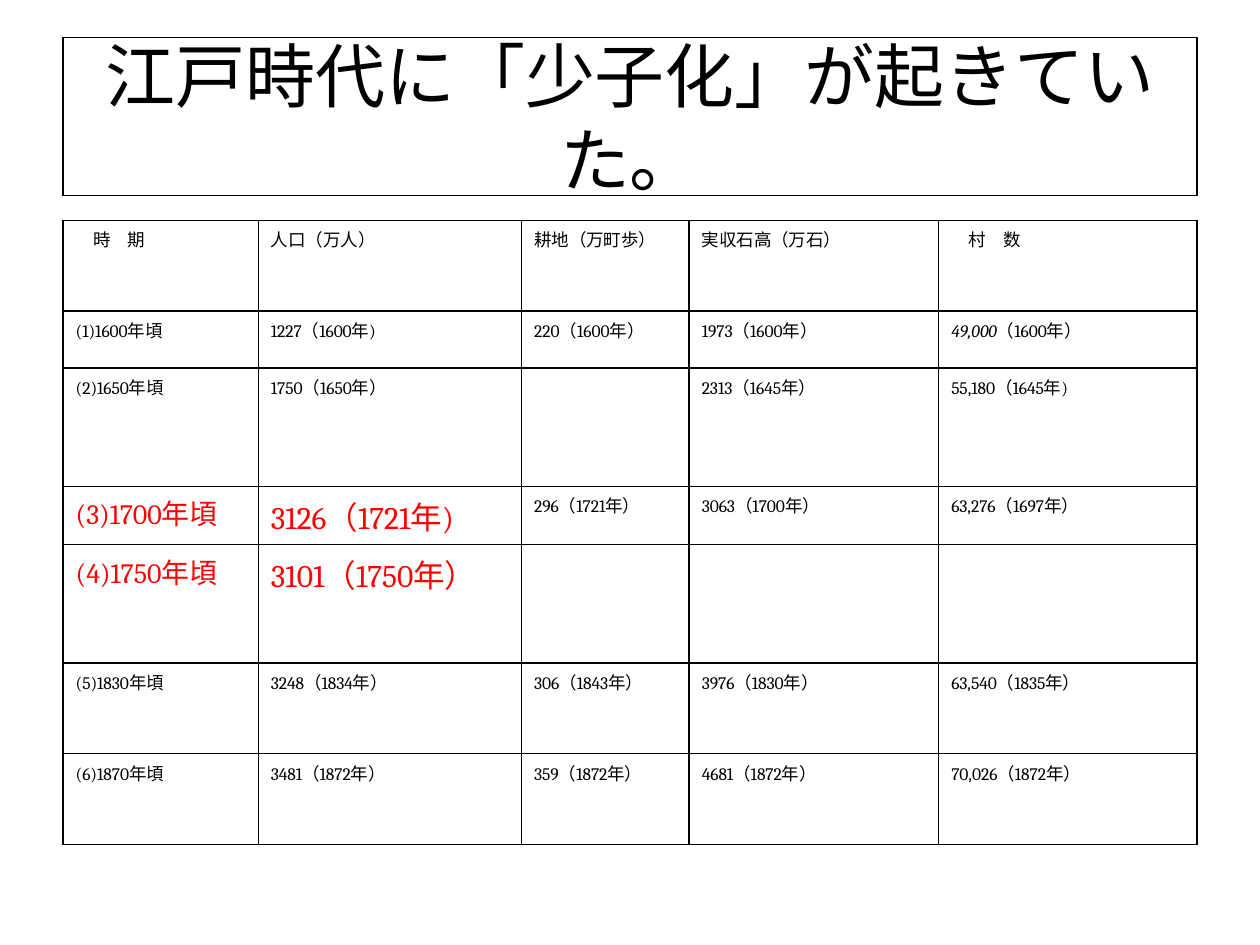
from lxml import etree
from pptx import Presentation
from pptx import util as u
from pptx.dml.color import RGBColor
from pptx.enum import shapes, text
from pptx.oxml.ns import qn

BLACK, RED = "000000", "FF0000"
LEFT, WIDTH = 36, 648
COLUMN_WIDTHS = [111.6, 150.48, 95.76, 142.56, 147.6]
ROW_HEIGHTS = [51.84, 32.4, 67.68, 32.4, 67.68, 51.84, 51.84]
HIGHLIGHTED_ROWS = (3, 4)
HIGHLIGHT_SIZES = {0: 16, 1: 18}
ROWS = [
    ["　時　期", "人口（万人）", "耕地（万町歩）", "実収石高（万石）", "　村　数"],
    ["(1)1600年頃", "1227（1600年)", "220（1600年）", "1973（1600年）", "49,000|（1600年）"],
    ["(2)1650年頃", "1750（1650年）", "", "2313（1645年）", "55,180（1645年)"],
    ["(3)1700年頃", "3126（1721年)", "296（1721年）", "3063（1700年）", "63,276（1697年）"],
    ["(4)1750年頃", "3101（1750年）", "", "", ""],
    ["(5)1830年頃", "3248（1834年）", "306（1843年）", "3976（1830年）", "63,540（1835年）"],
    ["(6)1870年頃", "3481（1872年）", "359（1872年）", "4681（1872年）", "70,026（1872年）"],
]


def rgb(value):
    return RGBColor.from_string(value)


def add_run(paragraph, words, color, **font_format):
    run = paragraph.add_run()
    run.text = words
    run.font.color.rgb = rgb(color)
    for name, value in font_format.items():
        setattr(run.font, name, value)


def add_title(slide, words):
    box = slide.shapes.add_shape(shapes.MSO_SHAPE.RECTANGLE, u.Pt(LEFT),
                                 u.Pt(21.6), u.Pt(WIDTH), u.Pt(90))
    box.shadow.inherit = False
    box.fill.background()
    box.line.color.rgb = rgb(BLACK)
    box.line.width = u.Pt(0.75)
    frame = box.text_frame
    frame.word_wrap = True
    frame.vertical_anchor = text.MSO_ANCHOR.MIDDLE
    paragraph = frame.paragraphs[0]
    paragraph.alignment = text.PP_ALIGN.CENTER
    paragraph.line_spacing = u.Pt(48)
    add_run(paragraph, words, BLACK, name="Calibri", size=u.Pt(40))


def add_borders(cell):
    properties = cell._tc.get_or_add_tcPr()
    for index, side in enumerate(("a:lnL", "a:lnR", "a:lnT", "a:lnB")):
        line = etree.Element(qn(side), w=str(u.Pt(1)))
        fill = etree.SubElement(line, qn("a:solidFill"))
        etree.SubElement(fill, qn("a:srgbClr"), val=BLACK)
        properties.insert(index, line)


def fill_cell(cell, words, size, color):
    cell.fill.background()
    add_borders(cell)
    if not words:
        return
    paragraph = cell.text_frame.paragraphs[0]
    # Hanging indent
    indent = u.Pt(27)
    for name, value in {"marL": indent, "indent": -indent}.items():
        paragraph._p.get_or_add_pPr().set(name, str(value))
    # A bar separates an italic estimate from its year
    estimate, bar, rest = words.rpartition("|")
    if bar:
        add_run(paragraph, estimate, color, name="Cambria", size=u.Pt(size), italic=True)
    add_run(paragraph, rest, color, name="Cambria", size=u.Pt(size))


def add_population_table(slide):
    table = slide.shapes.add_table(len(ROWS), len(COLUMN_WIDTHS), u.Pt(LEFT), u.Pt(126),
                                   u.Pt(WIDTH), u.Pt(sum(ROW_HEIGHTS))).table
    table.first_row = table.horz_banding = False
    for column, width in zip(table.columns, COLUMN_WIDTHS):
        column.width = u.Pt(width)
    for r, (height, entries) in enumerate(zip(ROW_HEIGHTS, ROWS)):
        table.rows[r].height = u.Pt(height)
        for c, words in enumerate(entries):
            highlighted = r in HIGHLIGHTED_ROWS and c in HIGHLIGHT_SIZES
            size, color = (HIGHLIGHT_SIZES[c], RED) if highlighted else (10, BLACK)
            fill_cell(table.cell(r, c), words, size, color)


def main():
    deck = Presentation()
    deck.slide_width, deck.slide_height = u.Pt(720), u.Pt(540)
    slide = deck.slides.add_slide(deck.slide_layouts[6])
    # Heading
    add_title(slide, "江戸時代に「少子化」が起きていた。")
    # Population, farmland, yield and villages by period
    add_population_table(slide)
    deck.save("out.pptx")


if __name__ == "__main__":
    main()
